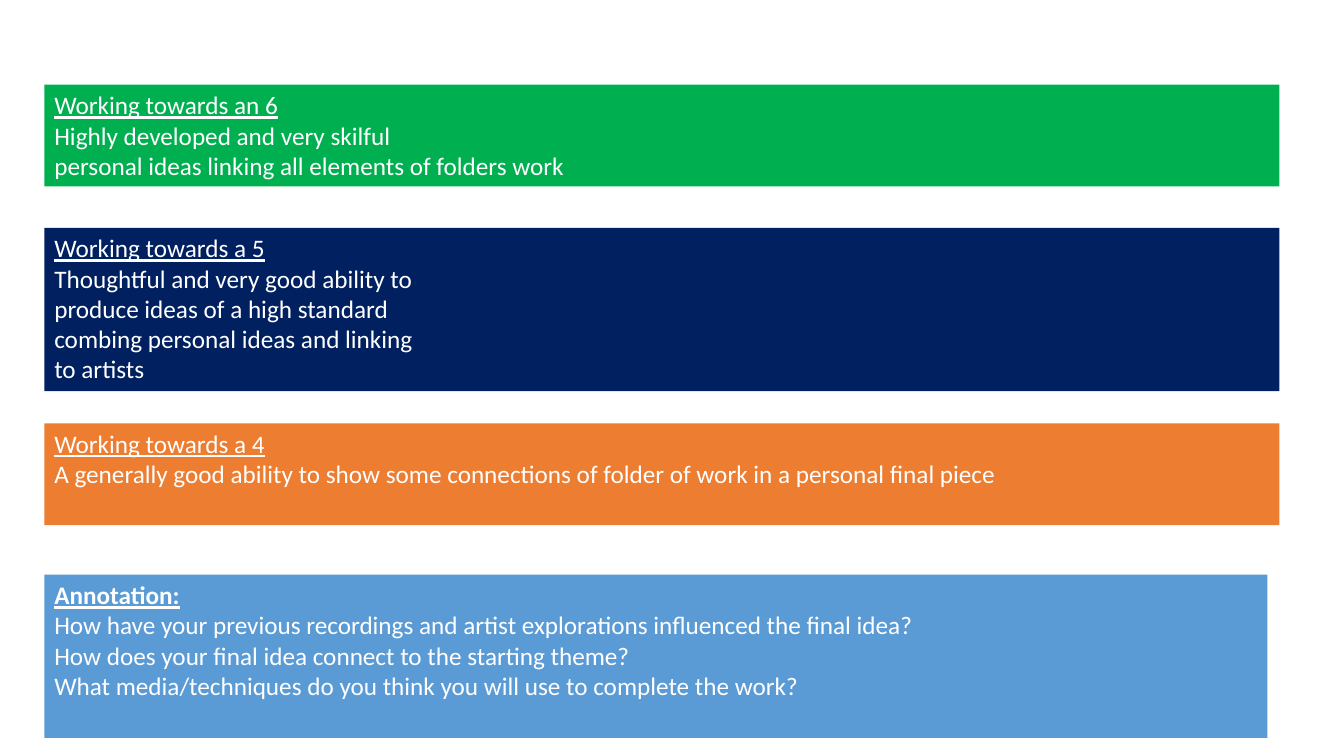
import dataclasses

import pptx
import pptx.dml.color
import pptx.enum.text
import pptx.util

Inches = pptx.util.Inches


@dataclasses.dataclass
class Band:
    top: float
    width: float
    height: float
    fill: str
    head: str
    lines: list[str]
    bold: bool = False


LEFT = 0.44
WIDE = 12.25
BANDS = [
    Band(0.84, WIDE, 1.01, "00B050", "Working towards an 6", [
        "Highly developed and very skilful",
        "personal ideas linking all elements of folders work",
    ]),
    Band(2.26, WIDE, 1.62, "002060", "Working towards a 5", [
        "Thoughtful and very good ability to",
        "produce ideas of a high standard",
        "combing personal ideas and linking",
        "to artists",
    ]),
    Band(4.2, WIDE, 1.01, "ED7D31", "Working towards a 4", [
        "A generally good ability to show some connections of folder of work"
        " in a personal final piece",
    ]),
    Band(5.7, 12.13, 1.62, "5B9BD5", "Annotation:", [
        "How have your previous recordings and artist explorations"
        " influenced the final idea?",
        "How does your final idea connect to the starting theme?",
        "What media/techniques do you think you will use to complete the work?",
    ], bold=True),
]


def paint(target, color: str) -> None:
    target.rgb = pptx.dml.color.RGBColor.from_string(color)


def draw_band(slide, band: Band) -> None:
    box = slide.shapes.add_textbox(
        Inches(LEFT), Inches(band.top), Inches(band.width), Inches(band.height))
    box.fill.solid()
    paint(box.fill.fore_color, band.fill)

    frame = box.text_frame
    frame.word_wrap = True
    frame.auto_size = pptx.enum.text.MSO_AUTO_SIZE.NONE
    frame.text = "\n".join([band.head, *band.lines])

    # The first line is the underlined heading
    for index, para in enumerate(frame.paragraphs):
        font = para.runs[0].font
        font.name = "Calibri"
        font.size = pptx.util.Pt(18)
        font.underline = index == 0
        font.bold = index == 0 and band.bold
        paint(font.color, "FFFFFF")


def main() -> None:
    deck = pptx.Presentation()
    deck.slide_width = Inches(13.33)
    deck.slide_height = Inches(7.5)
    slide = deck.slides.add_slide(deck.slide_layouts[6])

    # Grade bands and annotation prompts
    for band in BANDS:
        draw_band(slide, band)

    deck.save("out.pptx")


if __name__ == "__main__":
    main()
